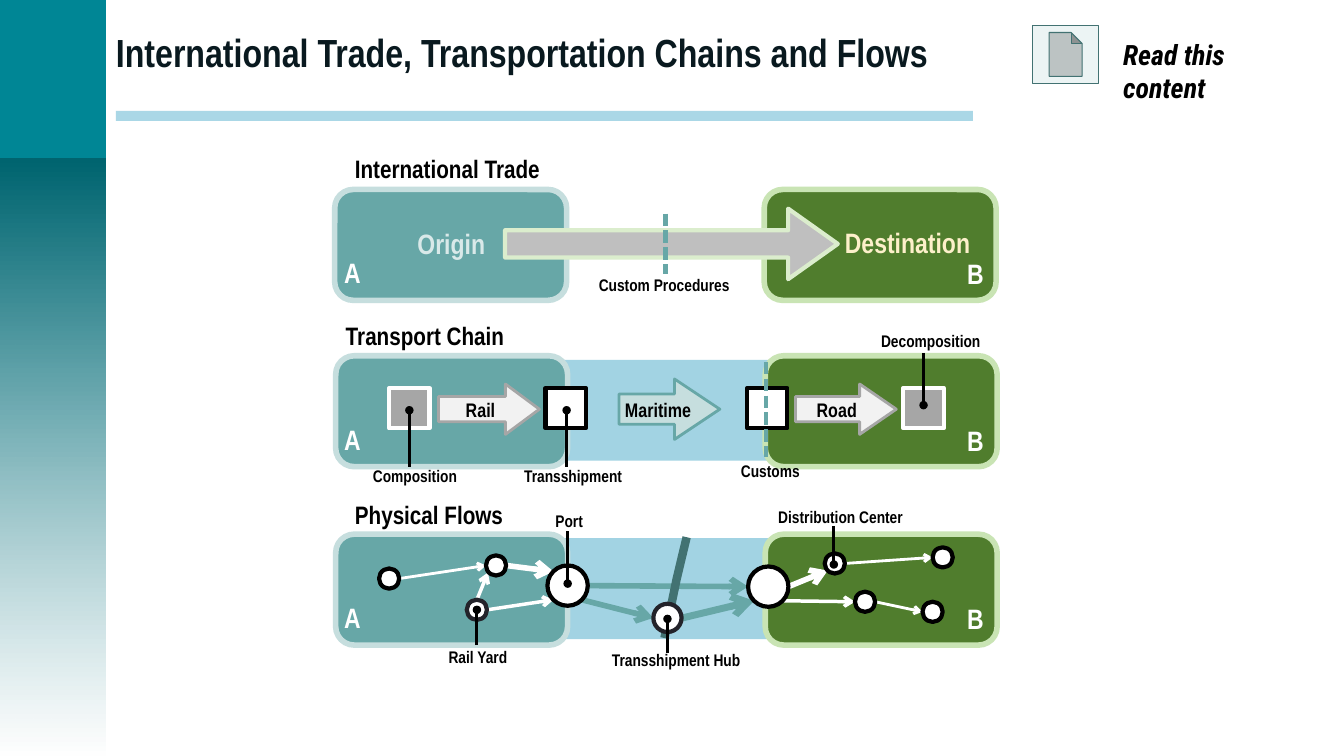
from dataclasses import dataclass

from lxml import etree
from pptx import Presentation
from pptx.dml.color import RGBColor
from pptx.enum.dml import MSO_LINE
from pptx.enum.shapes import MSO_CONNECTOR, MSO_SHAPE
from pptx.enum.text import MSO_ANCHOR, MSO_AUTO_SIZE, PP_ALIGN
from pptx.oxml.ns import qn
from pptx.util import Inches, Pt

RECT, ROUND, OVAL = MSO_SHAPE.RECTANGLE, MSO_SHAPE.ROUNDED_RECTANGLE, MSO_SHAPE.OVAL
ARROW, PAPER = MSO_SHAPE.RIGHT_ARROW, MSO_SHAPE.ACTION_BUTTON_DOCUMENT
STRAIGHT, DASH = MSO_CONNECTOR.STRAIGHT, MSO_LINE.SQUARE_DOT
MIDDLE, GROW = MSO_ANCHOR.MIDDLE, MSO_AUTO_SIZE.SHAPE_TO_FIT_TEXT
LEFT, CENTER = PP_ALIGN.LEFT, PP_ALIGN.CENTER

BLACK = RGBColor(0x00, 0x00, 0x00)
WHITE = RGBColor(0xFF, 0xFF, 0xFF)
INK = RGBColor(0x09, 0x19, 0x1F)
COAL = RGBColor(0x23, 0x23, 0x2A)
TEAL = RGBColor(0x00, 0x86, 0x95)
DEEP = RGBColor(0x00, 0x65, 0x70)
RULE = RGBColor(0xAA, 0xD7, 0xE6)
SEA = RGBColor(0x8B, 0xC8, 0xDD)
SAGE = RGBColor(0x67, 0xA7, 0xA7)
MIST = RGBColor(0xC6, 0xDE, 0xDE)
PINE = RGBColor(0x42, 0x72, 0x72)
ICE = RGBColor(0xEC, 0xF4, 0xF4)
GREEN = RGBColor(0x50, 0x7D, 0x2D)
LIME = RGBColor(0xC9, 0xE4, 0xB4)
PALE = RGBColor(0xDB, 0xED, 0xCD)
GRAY = RGBColor(0xA6, 0xA6, 0xA6)
SILVER = RGBColor(0xBF, 0xBF, 0xBF)
CHALK = RGBColor(0xF2, 0xF2, 0xF2)
FOAM = RGBColor(0xD9, 0xE9, 0xE9)
CREAM = RGBColor(0xFD, 0xF0, 0xCA)
NARROW, ROBOTO = "Arial Narrow", "Roboto Condensed"


@dataclass
class Box:
    kind: int
    x: float
    y: float
    w: float
    h: float
    fill: RGBColor
    edge: RGBColor | None = None
    weight: float = 0
    adjust: tuple = ()
    text: str = ""


@dataclass
class Link:
    start: tuple
    end: tuple
    color: RGBColor = BLACK
    weight: float = 2
    tail: str = "oval"


@dataclass
class Label:
    text: str
    x: float
    y: float
    w: float
    h: float = 0.3
    size: int = 12
    color: RGBColor = BLACK
    align: PP_ALIGN = LEFT
    inset: bool = True
    wrap: bool = False
    face: str = NARROW
    slant: bool = False


def style(para, face: str, size: int, color: RGBColor, align) -> None:
    para.alignment = align
    font = para.font
    font.name, font.size, font.bold = face, Pt(size), True
    font.color.rgb = color


def fade(color, share: int) -> None:
    etree.SubElement(color, qn("a:alpha"), val=str(share * 1000))


def draw_box(shapes, box: Box):
    shape = shapes.add_shape(box.kind, Inches(box.x), Inches(box.y), Inches(box.w), Inches(box.h))
    shape.shadow.inherit = False
    shape.fill.solid()
    shape.fill.fore_color.rgb = box.fill
    if box.edge is None:
        shape.line.fill.background()
    else:
        shape.line.color.rgb = box.edge
        shape.line.width = Pt(box.weight)
    for i, value in enumerate(box.adjust):
        shape.adjustments[i] = value
    if box.text:
        frame = shape.text_frame
        frame.text, frame.word_wrap, frame.vertical_anchor = box.text, False, MIDDLE
        style(frame.paragraphs[0], NARROW, 14, BLACK, CENTER)
    return shape


def draw_link(shapes, link: Link) -> None:
    ends = [Inches(v) for v in (*link.start, *link.end)]
    line = shapes.add_connector(STRAIGHT, *ends)
    line.line.color.rgb = link.color
    line.line.width = Pt(link.weight)
    props = line.element.spPr
    if link.tail:
        etree.SubElement(props.find(qn("a:ln")), qn("a:tailEnd"), type=link.tail)
    else:
        line.line.dash_style = DASH
    etree.SubElement(props, qn("a:effectLst"))


def draw_label(shapes, label: Label) -> None:
    spot = shapes.add_textbox(Inches(label.x), Inches(label.y), Inches(label.w), Inches(label.h))
    frame = spot.text_frame
    frame.text, frame.word_wrap, frame.auto_size = label.text, label.wrap, GROW
    if not label.inset:
        frame.margin_left = frame.margin_right = frame.margin_top = frame.margin_bottom = 0
    para = frame.paragraphs[0]
    style(para, label.face, label.size, label.color, label.align)
    para.font.italic = label.slant


def draw_strip(shapes) -> None:
    draw_box(shapes, Box(RECT, -0.02, -0.01, 1.07, 1.58, TEAL))
    for shade in (TEAL, DEEP):
        strip = draw_box(shapes, Box(RECT, -0.02, 1.57, 1.07, 5.93, shade))
        strip.fill.gradient()
        strip.fill.gradient_angle = 270
        for stop, color in zip(strip.fill.gradient_stops, (shade, WHITE)):
            stop.color.rgb = color
        fade(list(strip.element.iter(qn("a:srgbClr")))[1], 51)
    draw_box(shapes, Box(RECT, 1.15, 1.1, 8.5, 0.1, RULE))


def draw_strait(shapes) -> None:
    spots = [(6.81, 5.33), (6.76, 5.54), (6.71, 5.75), (6.65, 6.04), (6.59, 6.33)]
    points = [(Inches(x), Inches(y)) for x, y in spots]
    pen = shapes.build_freeform(*points[0])
    pen.add_line_segments(points[1:], close=False)
    strait = pen.convert_to_shape()
    strait.shadow.inherit = False
    strait.fill.background()
    strait.line.color.rgb = PINE
    strait.line.width = Pt(6)


BOXES = [
    Box(PAPER, 10.24, 0.25, 0.66, 0.58, ICE, PINE, 0.75),
    Box(ARROW, 5.01, 2.07, 3.3, 0.7, SILVER, PALE, 3, (0.387, 0.704)),
    Box(ARROW, 4.35, 3.81, 1, 0.5, CHALK, GRAY, 2, (0.5, 0.674), "Rail"),
    Box(ARROW, 6.14, 3.76, 1, 0.6, MIST, SAGE, 2, (0.5, 0.75), "Maritime"),
    Box(ARROW, 7.89, 3.81, 1, 0.5, CHALK, GRAY, 2, (0.5, 0.727), "Road"),
]
BOXES += [Box(RECT, x, 3.85, 0.4, 0.4, fill, edge, 3) for x, fill, edge in (
    (3.86, GRAY, WHITE), (5.41, WHITE, BLACK), (7.41, WHITE, BLACK), (8.96, GRAY, WHITE))]

ROUTES = [Link(start, end, color, weight, "arrow") for start, end, color, weight in (
    ((3.96, 5.74), (4.82, 5.61), WHITE, 2), ((4.83, 6.05), (5.49, 5.95), WHITE, 2.5),
    ((4.73, 5.95), (4.84, 5.68), WHITE, 2.5), ((5.02, 5.61), (5.49, 5.67), WHITE, 4),
    ((7.82, 5.82), (8.21, 5.66), WHITE, 4), ((7.76, 5.96), (8.48, 5.97), WHITE, 2.5),
    ((8.68, 5.97), (9.15, 6.07), WHITE, 2), ((8.38, 5.59), (9.25, 5.53), WHITE, 2),
    ((5.83, 5.81), (7.42, 5.82), SAGE, 4), ((5.77, 5.95), (6.48, 6.13), SAGE, 4),
    ((6.77, 6.13), (7.48, 5.96), SAGE, 5))]

NODES = [Box(OVAL, x, y, size, size, WHITE, edge, 3) for x, y, size, edge in (
    (3.76, 5.64, 0.2, BLACK), (4.63, 5.95, 0.2, COAL), (4.82, 5.51, 0.2, BLACK),
    (9.15, 5.97, 0.2, BLACK), (8.48, 5.87, 0.2, BLACK), (8.18, 5.49, 0.2, BLACK),
    (9.25, 5.43, 0.2, BLACK), (6.48, 5.99, 0.28, COAL), (5.43, 5.61, 0.4, BLACK),
    (7.42, 5.62, 0.4, BLACK))]

MARKS = [Link((x, top), (x, end)) for x, top, end in (
    (4.06, 4.63, 4.07), (5.62, 4.63, 4.07), (9.16, 3.5, 4.02), (5.63, 5.27, 5.79),
    (8.27, 5.22, 5.6), (4.73, 6.4, 6.05), (6.62, 6.48, 6.14))]
MARKS += [Link((x, top), (x, end), SAGE, 3, "")
          for x, top, end in ((6.6, 2.12, 2.72), (7.6, 3.59, 4.53))]

LABELS = [
    Label("Read this content", 11.04, 0.32, 1.86, 0.44, 20, wrap=True, face=ROBOTO, slant=True),
    Label("International Trade", 3.52, 1.52, 1.85, size=18, inset=False),
    Label("Transport Chain", 3.42, 3.18, 1.59, size=18, align=CENTER, inset=False),
    Label("Physical Flows", 3.52, 4.95, 1.49, size=18, inset=False),
    Label("Origin", 4.14, 2.25, 0.72, 0.34, 20, FOAM, inset=False),
    Label("Destination", 8.38, 2.24, 1.28, 0.34, 20, CREAM, inset=False),
    Label("Custom Procedures", 5.84, 2.68, 1.52),
    Label("Composition", 3.6, 4.57, 1.05),
    Label("Transshipment", 5.1, 4.57, 1.18),
    Label("Customs", 7.25, 4.52, 0.79),
    Label("Decomposition", 8.64, 3.23, 1.2),
    Label("Port", 5.41, 5.02, 0.48),
    Label("Distribution Center", 7.62, 4.98, 1.45),
    Label("Rail Yard", 4.35, 6.37, 0.79),
    Label("Transshipment Hub", 5.97, 6.4, 1.49),
]


def main() -> None:
    deck = Presentation()
    deck.slide_width, deck.slide_height = Inches(13.33), Inches(7.5)
    slide = deck.slides.add_slide(deck.slide_layouts[5])
    shapes = slide.shapes
    title = shapes.title
    title.left, title.top, title.width, title.height = (Inches(v) for v in (1.05, 0.01, 11.98, 1))
    title.text_frame.text = "International Trade, Transportation Chains and Flows"
    title.text_frame.vertical_anchor = MIDDLE
    style(title.text_frame.paragraphs[0], NARROW, 28, INK, LEFT)

    draw_strip(shapes)
    for x, y in ((5.43, 3.57), (5.54, 5.34)):
        band = draw_box(shapes, Box(RECT, x, y, 2.3, 1, SEA))
        fade(next(band.element.iter(qn("a:srgbClr"))), 80)
    for x, y in ((3.32, 1.88), (3.33, 3.53), (3.33, 5.3)):
        draw_box(shapes, Box(ROUND, x, y, 2.3, 1.1, SAGE, MIST, 4))
        draw_box(shapes, Box(ROUND, x + 4.26, y, 2.3, 1.1, GREEN, LIME, 4))
        for name, left, drop in (("A", 3.31, 0.61), ("B", 9.49, 0.62)):
            draw_label(shapes, Label(name, left, y + drop, 0.37, 0.44, 20, WHITE, CENTER))
    for box in BOXES:
        draw_box(shapes, box)
    for route in ROUTES:
        draw_link(shapes, route)
    draw_strait(shapes)
    for node in NODES:
        draw_box(shapes, node)
    for mark in MARKS:
        draw_link(shapes, mark)
    for label in LABELS:
        draw_label(shapes, label)
    deck.save("out.pptx")


if __name__ == "__main__":
    main()
